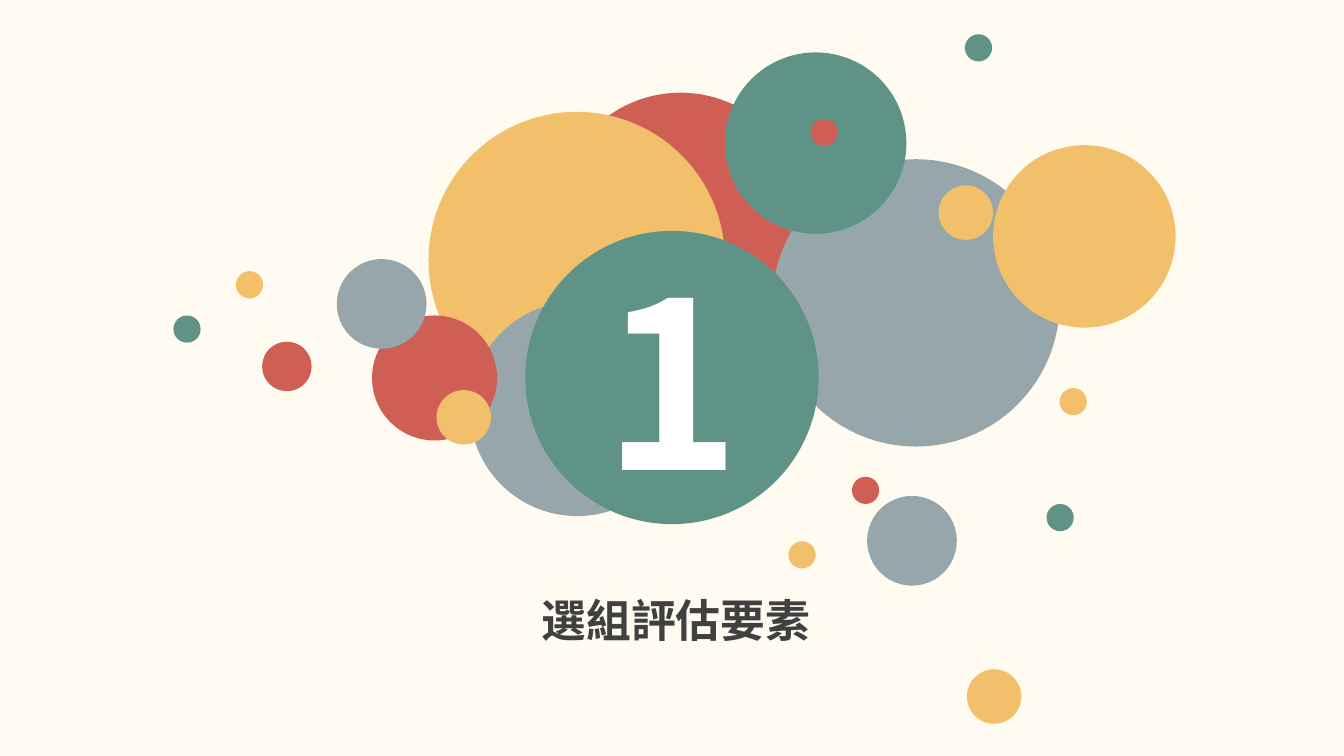
from dataclasses import dataclass

from lxml import etree
from pptx import Presentation
from pptx.dml.color import RGBColor
from pptx.enum.shapes import MSO_SHAPE
from pptx.enum.text import MSO_ANCHOR, PP_ALIGN
from pptx.oxml.ns import qn
from pptx.util import Inches, Pt

OVAL = MSO_SHAPE.OVAL
MIDDLE = MSO_ANCHOR.MIDDLE
CENTER = PP_ALIGN.CENTER
TITLE_ONLY = 5


@dataclass(frozen=True)
class Theme:
    font: str = "Noto Sans CJK SC"
    cream: str = "FFFBF0"
    red: str = "CF5F55"
    yellow: str = "F2C06B"
    gray: str = "97A6AB"
    green: str = "5F9387"
    white: str = "FFFFFF"
    ink: str = "404040"
    number_size: int = 166
    title_size: int = 32


class SectionSlide:
    """Draws a section divider made of bubbles, a number and a title."""

    def __init__(self, deck, theme):
        self.theme = theme
        self.slide = deck.slides.add_slide(deck.slide_layouts[TITLE_ONLY])
        backdrop = self.slide.background.fill
        backdrop.solid()
        backdrop.fore_color.rgb = RGBColor.from_string(theme.cream)

    def bubble(self, left, top, diameter, color):
        circle = self.slide.shapes.add_shape(
            OVAL, Inches(left), Inches(top), Inches(diameter), Inches(diameter))
        circle.shadow.inherit = False
        circle.fill.solid()
        circle.fill.fore_color.rgb = RGBColor.from_string(color)
        circle.line.fill.background()
        return circle

    def label(self, frame, text, size, color):
        frame.word_wrap = True
        frame.vertical_anchor = MIDDLE
        paragraph = frame.paragraphs[0]
        paragraph.alignment = CENTER
        run = paragraph.add_run()
        run.text = text
        run.font.size = Pt(size)
        run.font.bold = True
        run.font.color.rgb = RGBColor.from_string(color)
        run.font.name = self.theme.font
        east_asian = etree.SubElement(run._r.get_or_add_rPr(), qn("a:ea"))
        east_asian.set("typeface", self.theme.font)

    def number(self, text, left, top, diameter):
        badge = self.bubble(left, top, diameter, self.theme.green)
        self.label(badge.text_frame, text, self.theme.number_size, self.theme.white)

    def title(self, text, left, top, width, height):
        heading = self.slide.shapes.title
        heading.left, heading.top = Inches(left), Inches(top)
        heading.width, heading.height = Inches(width), Inches(height)
        self.label(heading.text_frame, text, self.theme.title_size, self.theme.ink)


def main():
    deck = Presentation()
    deck.slide_width, deck.slide_height = Inches(13.33), Inches(7.5)
    theme = Theme()
    section = SectionSlide(deck, theme)
    dot, small, medium = 0.27, 0.54, 0.89
    bubbles = [
        (5.52, 0.92, 2.46, theme.red),
        (4.25, 1.11, 2.94, theme.yellow),
        (4.66, 2.99, 2.13, theme.gray),
        (7.66, 1.58, 2.85, theme.gray),
        (7.19, 0.52, 1.8, theme.green),
        (3.69, 3.13, 1.24, theme.red),
        (8.6, 4.92, medium, theme.gray),
        (8.45, 4.73, dot, theme.red),
        (7.82, 5.37, dot, theme.yellow),
        (10.38, 5, dot, theme.green),
        (9.59, 6.64, small, theme.yellow),
        (9.85, 1.44, 1.81, theme.yellow),
        (3.34, 2.57, medium, theme.gray),
        (2.6, 3.39, 0.49, theme.red),
        (2.34, 2.69, dot, theme.yellow),
        (1.72, 3.13, dot, theme.green),
        (4.33, 3.87, small, theme.yellow),
        (8.04, 1.18, dot, theme.red),
        (10.51, 3.85, dot, theme.yellow),
        (9.57, 0.34, dot, theme.green),
        (9.31, 1.84, small, theme.yellow),
    ]
    for left, top, diameter, color in bubbles:
        section.bubble(left, top, diameter, color)
    section.number("1", 5.21, 2.29, 2.91)
    section.title("選組評估要素", 3.69, 5.83, 6.03, 0.64)
    deck.save("out.pptx")


if __name__ == "__main__":
    main()
